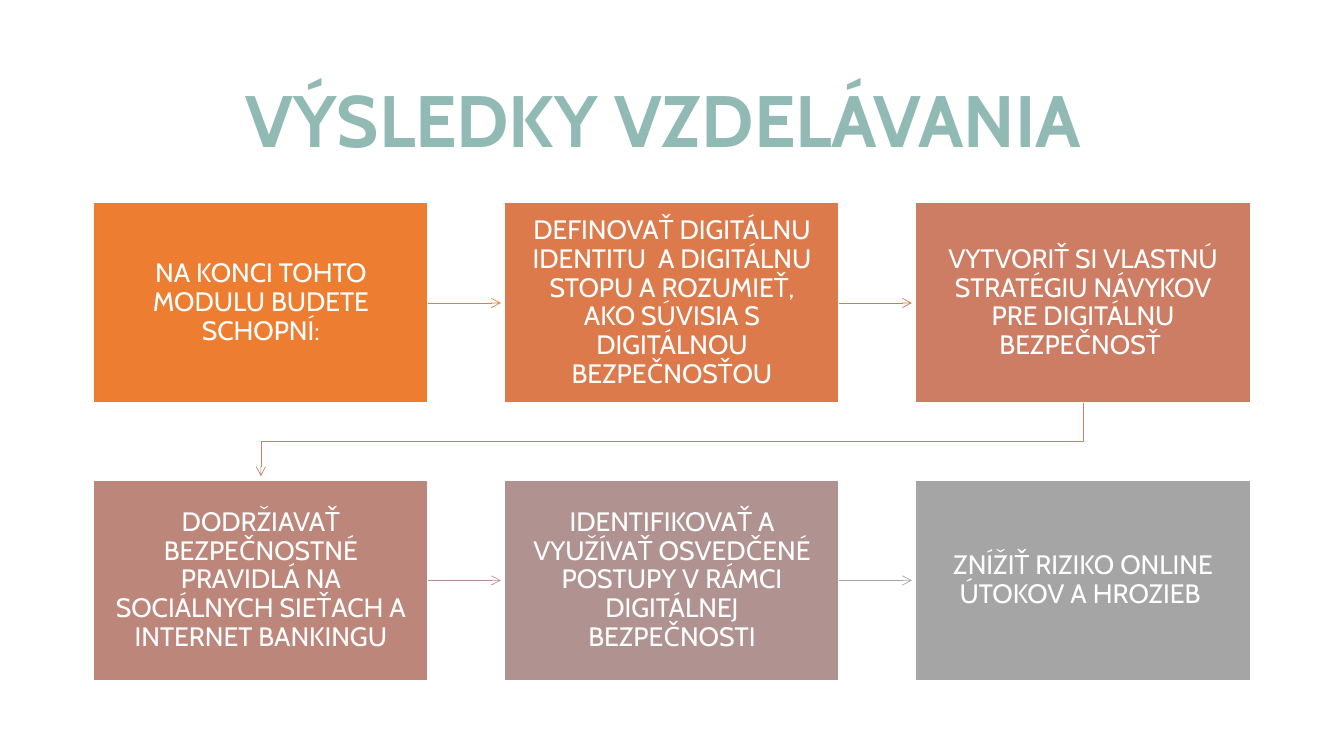
from dataclasses import dataclass

from lxml import etree
from pptx import Presentation
from pptx.dml.color import RGBColor
from pptx.enum.shapes import MSO_CONNECTOR, MSO_SHAPE
from pptx.enum.text import MSO_ANCHOR, PP_ALIGN
from pptx.oxml.ns import qn
from pptx.util import Cm, Pt

RECT = MSO_SHAPE.RECTANGLE
STRAIGHT = MSO_CONNECTOR.STRAIGHT
MIDDLE = MSO_ANCHOR.MIDDLE
CENTER = PP_ALIGN.CENTER
RIGHT_SIDE = 3


@dataclass(frozen=True)
class Theme:
    font: str = "Cabin"
    title: str = "92BAB5"
    white: str = "FFFFFF"
    steps: tuple = ("ED7D31", "DC7A4B", "CC7D64", "BD867B", "B09391", "A5A5A5")
    arrows: tuple = ("ED7D31", "D87A51", "C48170", "B4908B", "A5A5A5")
    title_size: int = 52
    step_size: int = 19
    edge: float = 1
    arrow: float = 0.5


STEPS = [
    "NA KONCI TOHTO MODULU BUDETE SCHOPNÍ:",
    "DEFINOVAŤ DIGITÁLNU IDENTITU  A DIGITÁLNU STOPU A ROZUMIEŤ, "
    "AKO SÚVISIA S DIGITÁLNOU BEZPEČNOSŤOU",
    "VYTVORIŤ SI VLASTNÚ STRATÉGIU NÁVYKOV PRE DIGITÁLNU BEZPEČNOSŤ ",
    "DODRŽIAVAŤ BEZPEČNOSTNÉ PRAVIDLÁ NA SOCIÁLNYCH SIEŤACH A INTERNET BANKINGU",
    "IDENTIFIKOVAŤ A VYUŽÍVAŤ OSVEDČENÉ POSTUPY V RÁMCI DIGITÁLNEJ BEZPEČNOSTI",
    "ZNÍŽIŤ RIZIKO ONLINE ÚTOKOV A HROZIEB ",
]

COLS = 3
LEFT, TOP = Cm(2.36), Cm(5.11)
WIDTH, HEIGHT = Cm(8.43), Cm(5.05)
STEP_X, STEP_Y = Cm(10.36), Cm(6.99)
GAP = Cm(0.1)
INSET = {"margin_left": Cm(0.41), "margin_right": Cm(0.41),
         "margin_top": Cm(0.43), "margin_bottom": Cm(0.43)}


def apply(target, values):
    for name, value in values.items():
        setattr(target, name, value)


class Deck:
    def __init__(self, theme):
        self.theme = theme
        self.file = Presentation()
        apply(self.file, {"slide_width": Cm(33.87), "slide_height": Cm(19.05)})
        self.slide = self.file.slides.add_slide(self.file.slide_layouts[6])
        self.shapes = self.slide.shapes

    def label(self, shape, text, size, color, after, bold=False, inset=None):
        frame = shape.text_frame
        apply(frame, {"word_wrap": True, "vertical_anchor": MIDDLE, **(inset or {})})
        para = frame.paragraphs[0]
        apply(para, {"alignment": CENTER, "line_spacing": 0.9, "space_after": Pt(after)})
        run = para.add_run()
        run.text = text
        apply(run.font, {"name": self.theme.font, "size": Pt(size), "bold": bold})
        run.font.color.rgb = RGBColor.from_string(color)

    def title(self, text):
        box = self.shapes.add_textbox(Cm(2.33), Cm(1.55), Cm(29.21), Cm(3.15))
        self.label(box, text, self.theme.title_size, self.theme.title, 6, bold=True)

    def line(self, shape, color, width):
        shape.line.color.rgb = RGBColor.from_string(color)
        shape.line.width = Pt(width)

    def step(self, text, color, left, top):
        box = self.shapes.add_shape(RECT, left, top, WIDTH, HEIGHT)
        box.shadow.inherit = False
        box.fill.solid()
        box.fill.fore_color.rgb = RGBColor.from_string(color)
        self.line(box, self.theme.white, self.theme.edge)
        self.label(box, text, self.theme.step_size, self.theme.white, 7, inset=INSET)
        return box

    def head(self, shape, color):
        self.line(shape, color, self.theme.arrow)
        edge = shape._element.spPr.find(qn("a:ln"))
        etree.SubElement(edge, qn("a:tailEnd"), type="arrow")

    def arrow(self, start, end, color):
        mid = start.top + start.height // 2
        link = self.shapes.add_connector(
            STRAIGHT, start.left + start.width, mid, end.left - GAP, mid)
        link.begin_connect(start, RIGHT_SIDE)
        self.head(link, color)
        etree.SubElement(link._element.spPr, qn("a:effectLst"))

    def elbow(self, start, end, color):
        from_x = start.left + start.width // 2
        to_x = end.left + end.width // 2
        base = start.top + start.height
        bend = (base + end.top) // 2
        route = self.shapes.build_freeform(from_x, base)
        route.add_line_segments(
            [(from_x, bend), (to_x, bend), (to_x, end.top - GAP)], close=False)
        link = route.convert_to_shape()
        link.shadow.inherit = False
        link.fill.background()
        self.head(link, color)


def main():
    theme = Theme()
    deck = Deck(theme)
    deck.title("VÝSLEDKY VZDELÁVANIA ")
    boxes = []
    for index, (text, color) in enumerate(zip(STEPS, theme.steps)):
        row, col = divmod(index, COLS)
        boxes.append(deck.step(text, color, LEFT + col * STEP_X, TOP + row * STEP_Y))
    for start, end, color in zip(boxes, boxes[1:], theme.arrows):
        join = deck.arrow if start.top == end.top else deck.elbow
        join(start, end, color)
    deck.file.save("out.pptx")


if __name__ == "__main__":
    main()
